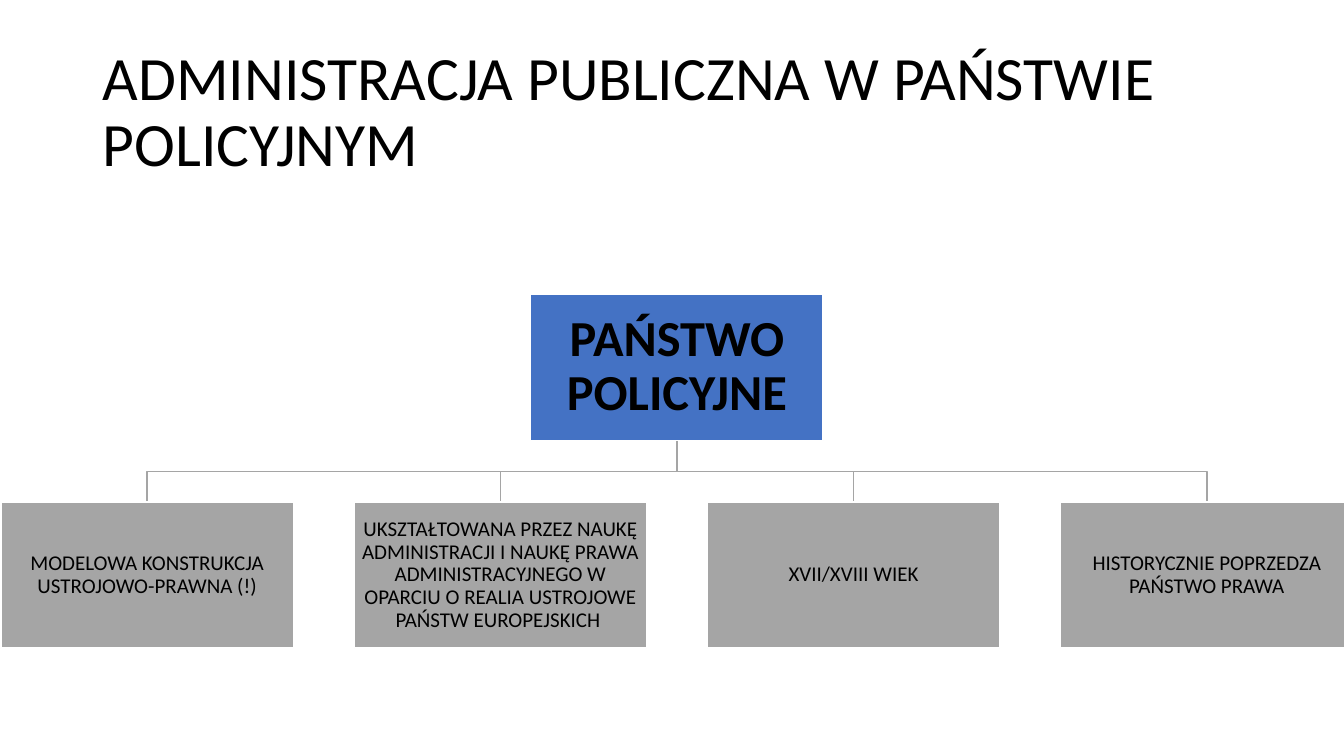
from pptx import Presentation
from pptx.dml.color import RGBColor
from pptx.enum.shapes import MSO_SHAPE as Shape
from pptx.enum.text import MSO_ANCHOR as Anchor, PP_ALIGN as Align
from pptx.util import Inches, Pt

TITLE = "ADMINISTRACJA PUBLICZNA W PAŃSTWIE POLICYJNYM"
ROOT = "PAŃSTWO POLICYJNE"
TRAITS = [
    "MODELOWA KONSTRUKCJA USTROJOWO-PRAWNA (!)",
    "UKSZTAŁTOWANA PRZEZ NAUKĘ ADMINISTRACJI I NAUKĘ PRAWA "
    "ADMINISTRACYJNEGO W OPARCIU O REALIA USTROJOWE PAŃSTW EUROPEJSKICH ",
    "XVII/XVIII WIEK",
    "HISTORYCZNIE POPRZEDZA PAŃSTWO PRAWA",
]
BLACK, WHITE, BLUE, GRAY = "000000", "FFFFFF", "4472C4", "A5A5A5"

BOX_W, BOX_H = 2.9, 1.45
ROOT_TOP, TRAIT_TOP = 2.92, 4.98
FIRST, LAST = 0.01, 10.52
STEP = (LAST - FIRST) / (len(TRAITS) - 1)
ROOT_LEFT = (FIRST + LAST) / 2


def color(code):
    return RGBColor.from_string(code)


def write(shape, text, size, align, bold=False, inset=None):
    frame = shape.text_frame
    frame.word_wrap = True
    frame.vertical_anchor = Anchor.MIDDLE
    if inset is not None:
        frame.margin_left = frame.margin_right = Inches(inset)
        frame.margin_top = frame.margin_bottom = Inches(inset)
    frame.text = text
    para = frame.paragraphs[0]
    para.alignment = align
    para.line_spacing = 0.9
    font = para.runs[0].font
    font.name, font.size, font.bold = "Calibri", Pt(size), bold
    font.color.rgb = color(BLACK)


def outline(shape, code):
    shape.shadow.inherit = False
    shape.line.color.rgb = color(code)
    shape.line.width = Pt(1)


def add_box(slide, left, top, fill, text, size, bold, inset):
    box = slide.shapes.add_shape(
        Shape.RECTANGLE, Inches(left), Inches(top), Inches(BOX_W), Inches(BOX_H))
    box.fill.solid()
    box.fill.fore_color.rgb = color(fill)
    outline(box, WHITE)
    write(box, text, size, Align.CENTER, bold, inset)


def add_branch(slide, left):
    """Draw the elbow line from the root box to the trait box at left."""
    start, end = ROOT_LEFT + BOX_W / 2, left + BOX_W / 2
    top = ROOT_TOP + BOX_H
    mid = (top + TRAIT_TOP) / 2
    path = slide.shapes.build_freeform(Inches(start), Inches(top))
    bends = [(start, mid), (end, mid), (end, TRAIT_TOP)]
    path.add_line_segments([(Inches(x), Inches(y)) for x, y in bends], close=False)
    branch = path.convert_to_shape()
    branch.fill.background()
    outline(branch, GRAY)


def main():
    deck = Presentation()
    deck.slide_width, deck.slide_height = Inches(13.33), Inches(7.5)
    slide = deck.slides.add_slide(deck.slide_layouts[6])

    title = slide.shapes.add_textbox(
        Inches(0.92), Inches(0.4), Inches(11.5), Inches(1.45))
    write(title, TITLE, 44, Align.LEFT)

    lefts = [FIRST + i * STEP for i in range(len(TRAITS))]
    for left in reversed(lefts):
        add_branch(slide, left)
    add_box(slide, ROOT_LEFT, ROOT_TOP, BLUE, ROOT, 36, True, 0.03)
    for left, trait in zip(lefts, TRAITS):
        add_box(slide, left, TRAIT_TOP, GRAY, trait, 15, False, 0.01)

    deck.save("out.pptx")


if __name__ == "__main__":
    main()
